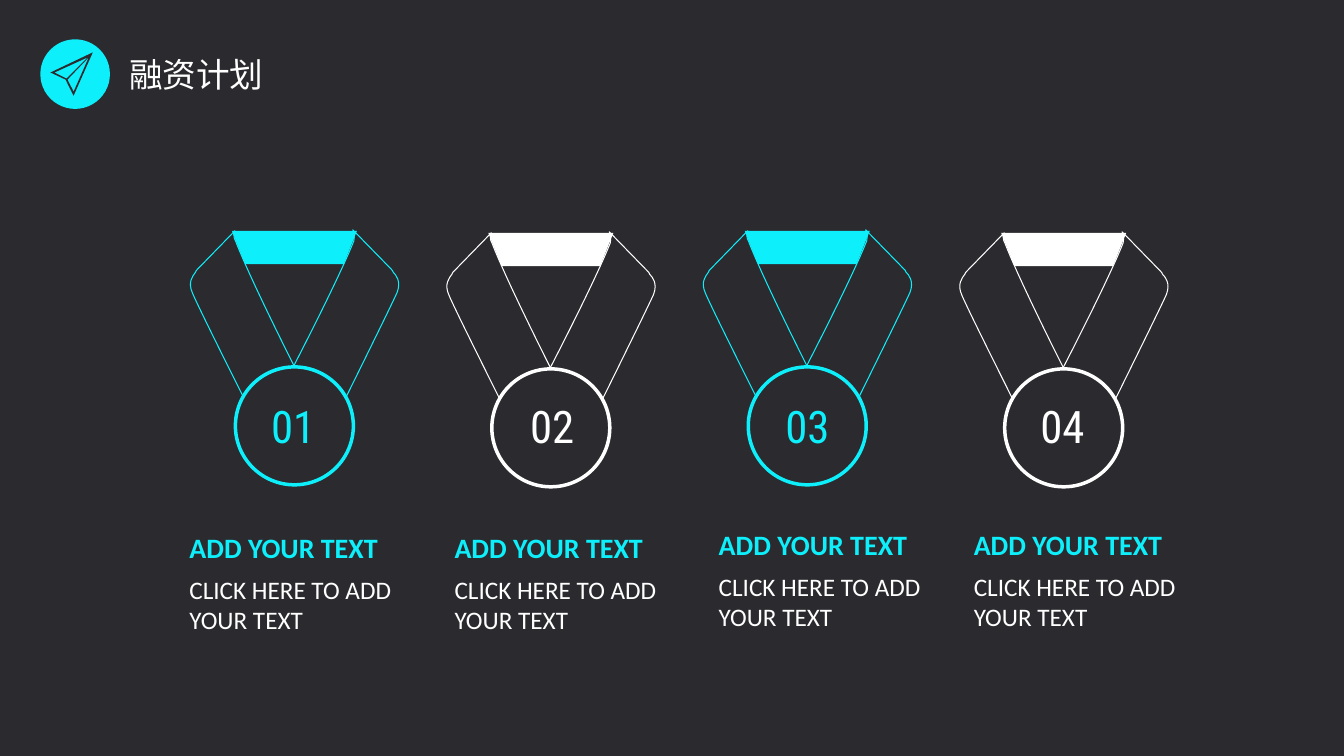
"""Build the financing plan slide: four numbered medals with captions."""
from lxml import etree
from pptx import Presentation
from pptx import util as u
from pptx.dml.color import RGBColor
from pptx.enum import shapes, text
from pptx.oxml.ns import qn

DARK = RGBColor(0x2B, 0x2A, 0x2F)
CYAN = RGBColor(0x0D, 0xEF, 0xFA)
WHITE = RGBColor(0xFF, 0xFF, 0xFF)

TITLE = "融资计划"
HEADING = "ADD YOUR TEXT"
BODY = "CLICK HERE TO ADD YOUR TEXT"
MEDALS = [
    {"number": "01", "color": CYAN, "drop": 0, "number_left": 2.59, "caption": (1.78, 5.21)},
    {"number": "02", "color": WHITE, "drop": 0.02, "number_left": 5.16, "caption": (4.41, 5.21)},
    {"number": "03", "color": CYAN, "drop": 0, "number_left": 7.69, "caption": (7.03, 5.18)},
    {"number": "04", "color": WHITE, "drop": 0.02, "number_left": 10.22, "caption": (9.56, 5.18)},
]

FIRST_CENTER, LAST_CENTER, MEDAL_TOP = 2.92, 10.55, 2.28
PITCH = (LAST_CENTER - FIRST_CENTER) / (len(MEDALS) - 1)
CLASP_WIDTH, CLASP_HEIGHT = 1.24, 0.33
DISC_SIZE, DISC_DROP = 1.17, 1.36

RIGHT_RIBBON = [
    [(0.59, 0.11)],
    [(0.6, 0.06), (0.59, 0.02), (0.58, 0)],
    [(0.96, 0.39)] * 3,
    [(0.97, 0.4), (0.98, 0.41), (0.98, 0.42)],
    [(1.01, 0.45), (1.06, 0.51), (1.02, 0.62)],
    [(0.93, 0.82), (0.29, 2.11), (0.29, 2.11)],
    [(-0.24, 1.8)] * 3,
    [(-0.24, 1.8), (0.39, 0.61), (0.59, 0.11)],
]
LEFT_RIBBON = [
    [(-0.58, 0.12)],
    [(-0.61, 0.07), (-0.6, 0.03), (-0.59, 0.01)],
    [(-0.96, 0.39)] * 3,
    [(-0.97, 0.4), (-0.98, 0.41), (-0.98, 0.42)],
    [(-1.01, 0.46), (-1.06, 0.52), (-1.01, 0.63)],
    [(-0.93, 0.82), (-0.28, 2.11), (-0.28, 2.11)],
    [(0.23, 1.81)] * 3,
    [(0.23, 1.81), (-0.39, 0.61), (-0.58, 0.12)],
]
PLANE_OUTLINES = [
    [(0.65, 0.79), (0.73, 0.95), (0.92, 0.52), (0.5, 0.72)],
    [(0.66, 0.78), (0.54, 0.72), (0.87, 0.57)],
    [(0.73, 0.91), (0.67, 0.79), (0.88, 0.57)],
]


def box(*lengths):
    return [u.Inches(length) for length in lengths]


def paint(shape, fill=None, line=None, width=0.75):
    shape.shadow.inherit = False
    if fill is None:
        shape.fill.background()
    else:
        shape.fill.solid()
        shape.fill.fore_color.rgb = fill
    if line is None:
        shape.line.fill.background()
    else:
        shape.line.color.rgb = line
        shape.line.width = u.Pt(width)


def add_outline(parent, outlines, **colors):
    outlines = [[box(*point) for point in outline] for outline in outlines]
    builder = parent.build_freeform(*outlines[0][0], scale=1.0)
    for index, outline in enumerate(outlines):
        if index:
            builder.move_to(*outline[0])
        builder.add_line_segments(outline[1:], close=True)
    shape = builder.convert_to_shape()
    paint(shape, **colors)
    return shape


def bend(shape):
    """Turn every three line segments of the outline into one curve."""
    segments = list(shape._element.iter(qn("a:lnTo")))
    for first in range(0, len(segments) - 2, 3):
        curve = etree.Element(qn("a:cubicBezTo"))
        segments[first].addprevious(curve)
        for segment in segments[first:first + 3]:
            curve.append(segment[0])
            segment.getparent().remove(segment)
    for leftover in shape._element.findall(".//" + qn("a:lnTo")):
        leftover.getparent().remove(leftover)


def write(shape, words, size, font, color, bold=False):
    frame = shape.text_frame
    frame.word_wrap = True
    frame.auto_size = text.MSO_AUTO_SIZE.NONE
    frame.vertical_anchor = text.MSO_ANCHOR.TOP
    frame.text = words
    paragraph = frame.paragraphs[0]
    paragraph.alignment = text.PP_ALIGN.LEFT
    run = paragraph.runs[0]
    run.font.size = u.Pt(size)
    run.font.name = font
    run.font.bold = bold
    run.font.color.rgb = color
    etree.SubElement(run.font._element, qn("a:ea")).set("typeface", font)


def add_medal(slide, center, top, color):
    group = slide.shapes.add_group_shape().shapes
    clasp = group.add_shape(
        shapes.MSO_SHAPE.TRAPEZOID,
        *box(center - CLASP_WIDTH / 2, top + 0.01, CLASP_WIDTH, CLASP_HEIGHT))
    clasp.rotation = 180
    clasp.adjustments[0] = 0.4
    paint(clasp, fill=color)
    for ribbon in (RIGHT_RIBBON, LEFT_RIBBON):
        points = [(center + x, top + y) for curve in ribbon for x, y in curve]
        bend(add_outline(group, [points], line=color))
    disc = group.add_shape(
        shapes.MSO_SHAPE.OVAL,
        *box(center - DISC_SIZE / 2, top + DISC_DROP, DISC_SIZE, DISC_SIZE))
    paint(disc, fill=DARK, line=color, width=2.5)


def main():
    presentation = Presentation()
    presentation.slide_width, presentation.slide_height = box(13.33, 7.5)
    slide = presentation.slides.add_slide(presentation.slide_layouts[5])
    slide.background.fill.solid()
    slide.background.fill.fore_color.rgb = DARK

    title = slide.shapes.title
    title.left, title.top, title.width, title.height = box(1.18, 0.48, 1.94, 0.5)
    write(title, TITLE, 24, "Noto Sans CJK SC", WHITE)
    badge = slide.shapes.add_shape(shapes.MSO_SHAPE.OVAL, *box(0.4, 0.39, 0.69, 0.69))
    paint(badge, fill=CYAN)
    add_outline(slide.shapes, PLANE_OUTLINES, fill=DARK)

    for column, medal in enumerate(MEDALS):
        add_medal(slide, FIRST_CENTER + column * PITCH, MEDAL_TOP + medal["drop"], medal["color"])
        left, top = medal["caption"]
        number = slide.shapes.add_textbox(*box(medal["number_left"], 3.91, 0.83, 0.64))
        write(number, medal["number"], 32, "Roboto Condensed", medal["color"])
        heading = slide.shapes.add_textbox(*box(left, top, 2.2, 0.44))
        write(heading, HEADING, 20, "Calibri", CYAN, bold=True)
        body = slide.shapes.add_textbox(*box(left, top + 0.44, 2.2, 0.71))
        write(body, BODY, 18, "Calibri", WHITE)

    presentation.save("out.pptx")


if __name__ == "__main__":
    main()
